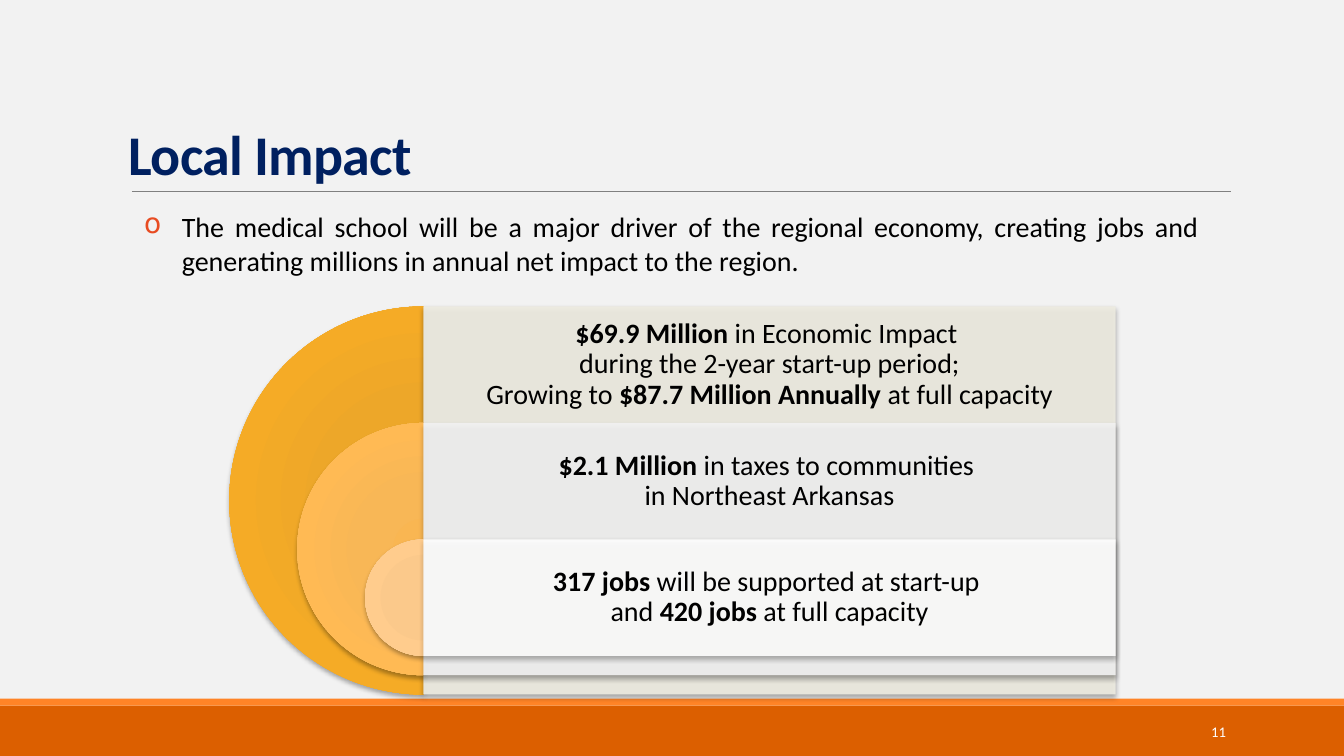
"""Builds the Local Impact slide with its nested half-circle diagram."""
import dataclasses

import lxml.etree
import pptx
import pptx.dml.color
import pptx.enum.shapes
import pptx.enum.text
import pptx.oxml
import pptx.util

Pt = pptx.util.Pt
RGB = pptx.dml.color.RGBColor.from_string
SHAPE = pptx.enum.shapes.MSO_SHAPE
ALIGN = pptx.enum.text.PP_ALIGN
ANCHOR = pptx.enum.text.MSO_ANCHOR
NS = 'xmlns:a="http://schemas.openxmlformats.org/drawingml/2006/main"'


@dataclasses.dataclass(frozen=True)
class Theme:
    font: str = "Calibri"
    title_size: float = 40
    body_size: float = 20
    number_size: float = 10.5
    background: str = "F2F2F2"
    footer: str = "DC5F00"
    footer_edge: str = "FF8427"
    rule: str = "808080"
    title: str = "002060"
    text: str = "000000"
    number: str = "FFFFFF"
    bullet: str = "E84C22"
    panels: tuple = ("EEECE1", "F2F2F2", "FFFFFF")
    pies: tuple = (
        ("EFA625", "EDA729", "F5AB26", "F0AE38"),
        ("F9B652", "F8B756", "FFBA54", "FDC066"),
        ("FBC788", "FBC98B", "FFCC8D", "FFD4A0"),
    )
    stops: tuple = (0, 34, 70, 100)


class SlideBuilder:
    """Draws styled elements on the current slide."""

    def __init__(self, prs, theme):
        self.theme = theme
        self.s = prs.slides.add_slide(prs.slide_layouts[6])
        fill = self.s.background.fill
        fill.solid()
        fill.fore_color.rgb = RGB(theme.background)

    def shape(self, kind, left, top, width, height, color):
        sp = self.s.shapes.add_shape(kind, Pt(left), Pt(top), Pt(width), Pt(height))
        sp.shadow.inherit = False
        sp.line.fill.background()
        sp.fill.solid()
        sp.fill.fore_color.rgb = RGB(color)
        return sp

    def shadow(self, sp):
        effects = sp._element.spPr.find(pptx.oxml.ns.qn("a:effectLst"))
        effects.append(pptx.oxml.parse_xml(
            f'<a:outerShdw {NS} blurRad="{Pt(3.5)}" dist="{Pt(2.2)}" dir="5400000" '
            'algn="ctr" rotWithShape="0"><a:srgbClr val="000000">'
            '<a:alpha val="32000"/></a:srgbClr></a:outerShdw>'))

    def panel(self, left, top, width, height, color):
        sp = self.shape(SHAPE.RECTANGLE, left, top, width, height, color)
        self.shadow(sp)
        srgb = sp._element.spPr.find(".//" + pptx.oxml.ns.qn("a:srgbClr"))
        lxml.etree.SubElement(srgb, pptx.oxml.ns.qn("a:alpha"), val="90000")

    def half_circle(self, center, top, diameter, colors):
        sp = self.shape(SHAPE.PIE, center - diameter / 2, top, diameter, diameter, colors[0])
        sp.adjustments[0], sp.adjustments[1] = 54, 162
        self.shadow(sp)
        stops = "".join(
            f'<a:gs pos="{pos * 1000}"><a:srgbClr val="{color}"/></a:gs>'
            for pos, color in zip(self.theme.stops, colors))
        solid = sp._element.spPr.find(pptx.oxml.ns.qn("a:solidFill"))
        solid.getparent().replace(solid, pptx.oxml.parse_xml(
            f'<a:gradFill {NS} rotWithShape="1"><a:gsLst>{stops}</a:gsLst>'
            '<a:path path="circle"><a:fillToRect l="100000" t="100000" '
            'r="100000" b="100000"/></a:path></a:gradFill>'))

    def rule(self, left, right, y):
        line = self.s.shapes.add_connector(
            pptx.enum.shapes.MSO_CONNECTOR.STRAIGHT, Pt(left), Pt(y), Pt(right), Pt(y))
        line.line.color.rgb = RGB(self.theme.rule)
        line.line.width = Pt(0.5)
        lxml.etree.SubElement(line._element.spPr, pptx.oxml.ns.qn("a:effectLst"))

    def text(self, left, top, width, height, text, size, color, align, anchor):
        """Writes one paragraph, with asterisks around its bold parts."""
        sp = self.s.shapes.add_textbox(Pt(left), Pt(top), Pt(width), Pt(height))
        tf = sp.text_frame
        tf.word_wrap = True
        tf.vertical_anchor = anchor
        p = tf.paragraphs[0]
        p.alignment = align
        for part, words in enumerate(text.split("*")):
            for row, line in enumerate(words.split("\n")):
                if row:
                    p.add_line_break()
                if line:
                    r = p.add_run()
                    r.text = line
                    r.font.name = self.theme.font
                    r.font.size = Pt(size)
                    r.font.bold = part % 2 == 1
                    r.font.color.rgb = RGB(color)
        return tf

    def title(self, text):
        tf = self.text(85, 46.8, 795.6, 90, f"*{text}*", self.theme.title_size,
                       self.theme.title, ALIGN.LEFT, ANCHOR.BOTTOM)
        p = tf.paragraphs[0]
        p.line_spacing = 0.85
        p.runs[0].font._element.set("spc", "-50")

    def bullet(self, text):
        tf = self.text(95.8, 146.2, 767.5, 55.4, text, self.theme.body_size,
                       self.theme.text, ALIGN.JUSTIFY, ANCHOR.TOP)
        tf.auto_size = pptx.enum.text.MSO_AUTO_SIZE.SHAPE_TO_FIT_TEXT
        p = tf.paragraphs[0]
        p.space_before, p.space_after = Pt(7), Pt(18)
        pPr = p._p.get_or_add_pPr()
        pPr.set("marL", str(Pt(27)))
        pPr.set("indent", str(-Pt(27)))
        pPr.append(pptx.oxml.parse_xml(
            f'<a:buClr {NS}><a:srgbClr val="{self.theme.bullet}"/></a:buClr>'))
        pPr.append(pptx.oxml.parse_xml(f'<a:buChar {NS} char="o"/>'))

    def impact(self, level, text):
        center, width, step = 302.4, 494.6, 83.2
        top = 218.9 + level * step
        diameter = 277.2 - level * 97
        self.half_circle(center, top, diameter, self.theme.pies[level])
        self.panel(center, top, width, diameter, self.theme.panels[level])
        tf = self.text(center, top, width, step, text, self.theme.body_size,
                       self.theme.text, ALIGN.CENTER, ANCHOR.MIDDLE)
        tf.margin_left = tf.margin_right = tf.margin_top = tf.margin_bottom = Pt(6)
        tf.paragraphs[0].line_spacing = 0.9


def main():
    prs = pptx.Presentation()
    prs.slide_width, prs.slide_height = Pt(960), Pt(540)
    theme = Theme()
    slide = SlideBuilder(prs, theme)
    slide.shape(SHAPE.RECTANGLE, 0, 504, 960, 36, theme.footer)
    slide.shape(SHAPE.RECTANGLE, 0, 499, 960, 5, theme.footer_edge)
    slide.rule(94.3, 879, 136.8)
    slide.text(779.8, 508.5, 103, 28.8, "11", theme.number_size, theme.number,
               ALIGN.RIGHT, ANCHOR.MIDDLE)
    slide.bullet("The medical school will be a major driver of the regional economy, "
                 "creating jobs and generating millions in annual net impact to the region.")
    impacts = (
        "*$69.9 Million *in Economic Impact \nduring the 2-year start-up period;\n"
        "Growing to *$87.7 Million Annually *at full capacity",
        "*$2.1 Million *in taxes to communities \nin Northeast Arkansas",
        "*317 jobs *will be supported at start-up \nand *420 jobs *at full capacity",
    )
    for level, text in enumerate(impacts):
        slide.impact(level, text)
    slide.title("Local Impact")
    prs.save("out.pptx")


if __name__ == "__main__":
    main()
